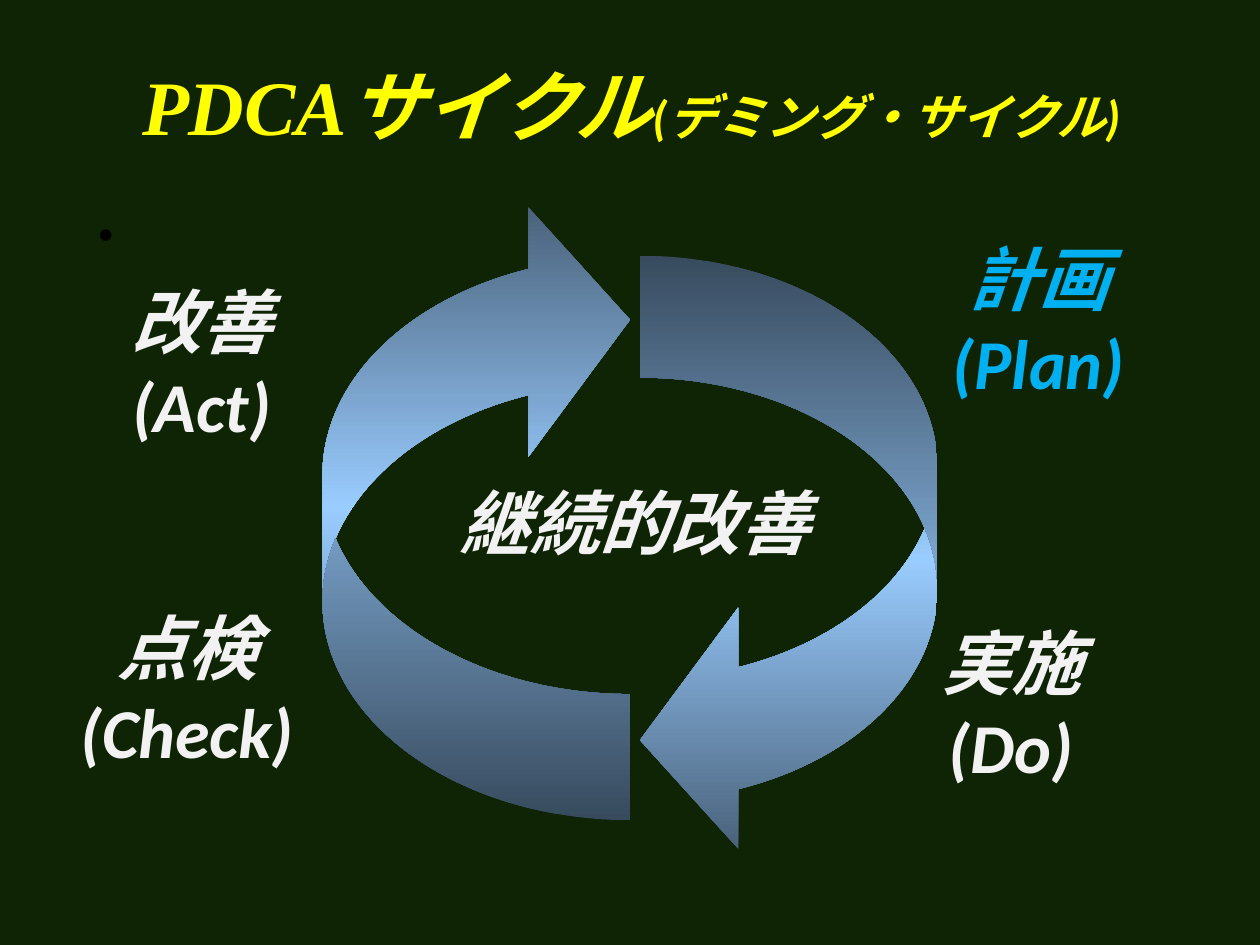
from copy import deepcopy
from dataclasses import dataclass

from pptx import Presentation
from pptx import util as u
from pptx.dml.color import RGBColor
from pptx.enum import shapes, text
from pptx.oxml.ns import qn


@dataclass(frozen=True)
class Theme:
    """Colours, fonts and type sizes of the slide."""
    back: str = "0F2305"
    head: str = "FFFF00"
    pale: str = "F2F2F2"
    plan: str = "00B0F0"
    dot: str = "000000"
    edge: str = "475E76"
    glow: str = "99CCFF"
    sans: str = "Calibri"
    serif: str = "Times New Roman"
    big: int = 44
    mid: int = 40
    small: int = 28
    mark: int = 24


T = Theme()
WIDE, HIGH = u.Inches(10), u.Inches(7.5)
COLS, ROWS = 100, 75


def rgb(code):
    """Turn a hex code into a colour."""
    return RGBColor.from_string(code)


def span(col, row, cols, rows):
    """Turn grid cells into left, top, width and height."""
    x, y = WIDE / COLS, HIGH / ROWS
    return [round(v) for v in (col * x, row * y, cols * x, rows * y)]


def move(item, cells):
    """Set an item on the grid."""
    item.left, item.top, item.width, item.height = span(*cells)


def style(font, size, color, name=T.sans, slant=True):
    """Set the size, colour, face and slant of a font."""
    font.size, font.name = u.Pt(size), name
    font.color.rgb = rgb(color)
    font.bold = font.italic = slant


def title(slide, cells, parts):
    """Fill the title with runs of text, size and face."""
    item = slide.shapes.title
    move(item, cells)
    frame = item.text_frame
    frame.vertical_anchor = text.MSO_ANCHOR.MIDDLE
    para = frame.paragraphs[0]
    para.alignment = text.PP_ALIGN.CENTER
    for words, size, name in parts:
        run = para.add_run()
        run.text = words
        style(run.font, size, T.head, name)


def bullet(slide, cells):
    """Show the lone bullet in the body placeholder."""
    item = slide.placeholders[1]
    move(item, cells)
    para = item.text_frame.paragraphs[0]
    para.text = "•"
    style(para.font, T.mark, T.dot, "Arial", False)
    prop = para._p.get_or_add_pPr()
    prop.set("marL", "0")
    prop.set("indent", "0")
    prop.insert(0, prop.makeelement(qn("a:buNone"), {}))


def arrow(slide, kind, cells, flip=False):
    """Draw one curved arrow with a light middle band."""
    item = slide.shapes.add_shape(kind, *span(*cells))
    item.shadow.inherit = False
    for i, share in enumerate((0.41, 0.81, 0.33)):
        item.adjustments[i] = share
    item.line.fill.background()
    item.fill.gradient()
    item.fill.gradient_angle = 90
    stops = item._element.spPr.find(qn("a:gradFill")).find(qn("a:gsLst"))
    stops.insert(1, deepcopy(stops[0]))
    tones = (T.edge, T.glow, T.edge)
    for stop, tone, place in zip(item.fill.gradient_stops, tones, (0, 0.5, 1)):
        stop.color.rgb = rgb(tone)
        stop.position = place
    if flip:
        item._element.spPr.xfrm.set("flipV", "1")


def label(slide, cells, lines, color=T.pale):
    """Write centred lines in a text box."""
    frame = slide.shapes.add_textbox(*span(*cells)).text_frame
    frame.word_wrap = True
    frame.vertical_anchor = text.MSO_ANCHOR.MIDDLE
    frame.text = "\n".join(lines)
    for para in frame.paragraphs:
        para.alignment = text.PP_ALIGN.CENTER
        style(para.font, T.mid, color)


def main():
    """Build and save the slide."""
    deck = Presentation()
    deck.slide_width, deck.slide_height = WIDE, HIGH
    slide = deck.slides.add_slide(deck.slide_layouts[1])
    slide.background.fill.solid()
    slide.background.fill.fore_color.rgb = rgb(T.back)

    title(slide, (5.1, 2.1, 90, 12.5), [
        ("PDCA", T.big, T.serif),
        ("サイクル", T.big, T.sans),
        ("(デミング・サイクル)", T.small, T.sans),
    ])
    bullet(slide, (6.8, 16, 10, 6))

    kind = shapes.MSO_SHAPE
    arrow(slide, kind.CURVED_LEFT_ARROW, (50.8, 20.3, 23.6, 48))
    arrow(slide, kind.CURVED_RIGHT_ARROW, (25.6, 15.5, 24.4, 49.6), True)

    label(slide, (35, 35.9, 30.7, 11), ["継続的改善"])
    label(slide, (0, 24.1, 32, 9.4), ["改善", "(Act)"])
    label(slide, (0, 52.3, 29.7, 4.7), ["点検", "(Check)"])
    label(slide, (65.6, 48.4, 29.3, 14.8), ["実施", "(Do)"])
    label(slide, (68.8, 21.8, 27.3, 7.1), ["計画", "(Plan)"], T.plan)
    deck.save("out.pptx")


if __name__ == "__main__":
    main()
